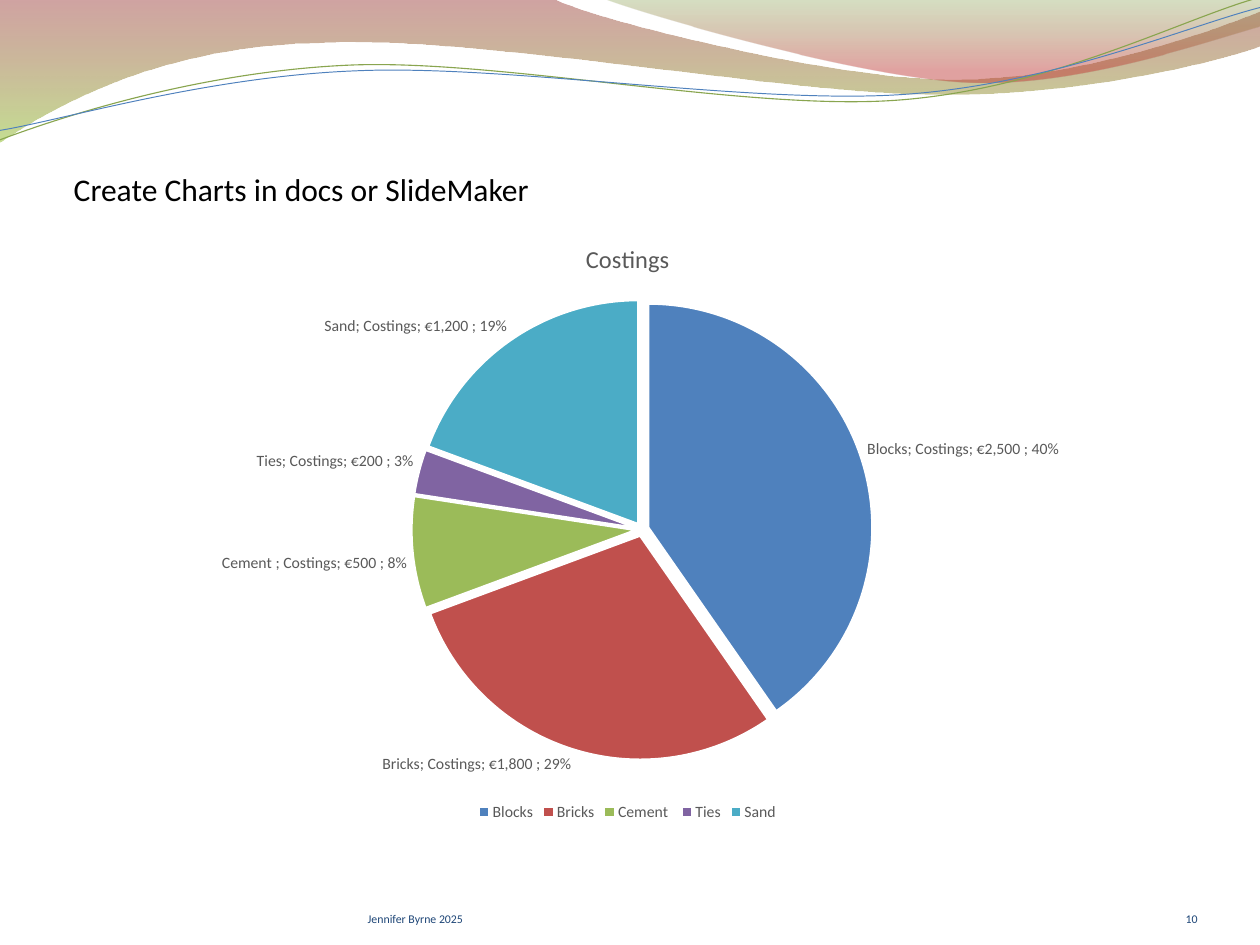
"""Build a slide with a wave banner and an exploded pie chart of costings."""
from lxml import etree
from pptx import Presentation
from pptx import util as u
from pptx.chart import data as cd
from pptx.dml.color import RGBColor
from pptx.enum import chart as ch, text
from pptx.oxml import ns

BLACK = RGBColor(0, 0, 0)
WHITE = RGBColor(0xFF, 0xFF, 0xFF)
GRAY = RGBColor(0x59, 0x59, 0x59)
NAVY = RGBColor(0x1E, 0x46, 0x77)
MAROON = RGBColor(0x97, 0x33, 0x30)
LIME = RGBColor(0x95, 0xC2, 0x38)
OLIVE = RGBColor(0x76, 0x95, 0x37)
RED = RGBColor(0xBE, 0x33, 0x30)
MOSS = RGBColor(0x89, 0xA5, 0x4F)
BLUE = RGBColor(0x4F, 0x81, 0xBD)
SLICES = [BLUE, RGBColor(0xC0, 0x50, 0x4D), RGBColor(0x9B, 0xBB, 0x59),
          RGBColor(0x80, 0x64, 0xA2), RGBColor(0x4B, 0xAC, 0xC6)]
COSTS = {"Blocks": 2500, "Bricks": 1800, "Cement ": 500, "Ties": 200, "Sand": 1200}
EURO = '"€"#,##0_);[Red]\\("€"#,##0\\)'


def style(font, size, color):
    font.name, font.size, font.bold = "Calibri", u.Pt(size), False
    font.color.rgb = color


def write(frame, words, size=12, color=BLACK, align=text.PP_ALIGN.LEFT,
          anchor=text.MSO_ANCHOR.TOP, inset=None, wrap=True):
    frame.text = words
    frame.word_wrap, frame.vertical_anchor = wrap, anchor
    frame.auto_size = text.MSO_AUTO_SIZE.NONE
    if inset is not None:
        frame.margin_left = frame.margin_right = u.Inches(inset)
        frame.margin_top = frame.margin_bottom = u.Inches(inset)
    para = frame.paragraphs[0]
    para.alignment = align
    style(para.runs[0].font, size, color)


class Deck:
    """Hold the style and the current slide, on a grid of one-inch columns and rows."""

    def __init__(self, cols, rows):
        self.prs = Presentation()
        self.prs.slide_width, self.prs.slide_height = u.Inches(cols), u.Inches(rows)
        self.slide = self.prs.slides.add_slide(self.prs.slide_layouts[5])
        self.shapes = self.slide.shapes

    def grid(self, *cells):
        return [u.Inches(c) for c in cells]

    def curve(self, start, legs, close):
        dots = [self.grid(*leg[i:i + 2]) for leg in legs for i in range(0, len(leg), 2)]
        pen = self.shapes.build_freeform(*self.grid(*start))
        pen.add_line_segments(dots, close=close)
        shape = pen.convert_to_shape()
        shape.shadow.inherit = False
        nodes = iter(list(shape.element.iter(ns.qn("a:lnTo"))))
        for leg in legs:
            head = next(nodes)
            if len(leg) == 6:
                head.tag = ns.qn("a:cubicBezTo")
                for tail in (next(nodes), next(nodes)):
                    head.append(tail[0])
                    tail.getparent().remove(tail)
        return shape

    def wave(self, start, *legs, stops):
        shape = self.curve(start, legs, True)
        shape.line.fill.background()
        shape.fill.gradient()
        shape.fill.gradient_angle = 270
        for mark, (place, color, alpha) in zip(shape.fill.gradient_stops, stops):
            mark.position, mark.color.rgb = place, color
        for node, stop in zip(shape.element.iter(ns.qn("a:srgbClr")), stops):
            etree.SubElement(node, ns.qn("a:alpha"), val=str(stop[2] * 1000))

    def thread(self, start, *legs, color, width):
        shape = self.curve(start, legs, False)
        shape.fill.background()
        shape.line.color.rgb, shape.line.width = color, u.Pt(width)

    def title(self, at, words, **form):
        box = self.shapes.title
        box.left, box.top, box.width, box.height = self.grid(*at)
        write(box.text_frame, words, **form)

    def label(self, at, words, **form):
        write(self.shapes.add_textbox(*self.grid(*at)).text_frame, words, **form)

    def pie(self, at, name, costs):
        data = cd.CategoryChartData(number_format=EURO)
        data.categories = list(costs)
        data.add_series(name, list(costs.values()))
        chart = self.shapes.add_chart(ch.XL_CHART_TYPE.PIE, *self.grid(*at), data).chart
        style(chart.font, 12, GRAY)
        chart.has_title = True
        head = chart.chart_title.text_frame
        head.text = name
        style(head.paragraphs[0].runs[0].font, 18.6, GRAY)
        chart.has_legend = True
        chart.legend.position = ch.XL_LEGEND_POSITION.BOTTOM
        chart.legend.include_in_layout = False
        style(chart.legend.font, 12, GRAY)
        plot = chart.plots[0]
        plot.vary_by_categories = True
        series = plot.series[0]
        for i, color in enumerate(SLICES):
            form = series.points[i].format
            form.fill.solid()
            form.fill.fore_color.rgb = color
            form.line.color.rgb, form.line.width = WHITE, u.Pt(1.5)
        for point in series._element.findall(ns.qn("c:dPt")):
            push = etree.Element(ns.qn("c:explosion"), val="3")
            point.find(ns.qn("c:spPr")).addprevious(push)
        tags = series.data_labels
        tags.show_value = tags.show_percentage = True
        tags.show_category_name = tags.show_series_name = True
        tags.number_format, tags.number_format_is_linked = EURO, True
        tags.position = ch.XL_LABEL_POSITION.OUTSIDE_END
        style(tags.font, 12, GRAY)


def main():
    deck = Deck(13.33, 10)
    deck.wave((0, -0.01), (5.87, -0.01), (6.34, 0.22, 8.85, 0.84, 10.11, 0.84),
              (11.37, 0.84, 12.78, 0.34, 13.33, 0.12), (13.35, 0.48),
              (13.11, 0.58, 11.6, 1.01, 9.94, 1), (8.29, 1, 5.09, 0.37, 3.43, 0.45),
              (1.72, 0.47, 0.61, 1.1, -0.01, 1.51),
              stops=[(0, MAROON, 45), (1, LIME, 55)])
    deck.wave((6.39, -0.01), (6.79, 0.15, 9.09, 0.82, 10.25, 0.87),
              (11.41, 0.92, 12.82, 0.42, 13.33, 0.28), (13.33, 0),
              stops=[(0, OLIVE, 30), (0.8, RED, 45)])
    deck.thread((0, 1.48), (0.64, 1.24, 2.1, 0.76, 3.69, 0.69),
                (5.27, 0.62, 7.9, 1.18, 9.5, 1.06),
                (11.11, 0.94, 12.51, 0.2, 13.3, -0.02), color=MOSS, width=0.85)
    deck.thread((0, 1.38), (0.63, 1.28, 2.18, 0.81, 3.77, 0.75),
                (5.37, 0.68, 7.96, 1.11, 9.56, 1),
                (11.15, 0.89, 12.55, 0.28, 13.33, 0.08), color=BLUE, width=0.75)
    deck.pie((0.64, 2.33, 12, 6.4), "Costings", COSTS)
    foot = dict(size=9, color=NAVY, anchor=text.MSO_ANCHOR.BOTTOM, inset=0)
    deck.label((3.89, 9.27, 4.89, 0.53), "Jennifer Byrne 2025", **foot)
    deck.label((11.56, 9.27, 1.11, 0.53), "10", align=text.PP_ALIGN.RIGHT, **foot)
    deck.title((0.68, 1.75, 5.27, 0.5), "Create Charts in docs or SlideMaker",
               size=24, wrap=False)
    deck.prs.save("out.pptx")


if __name__ == "__main__":
    main()
